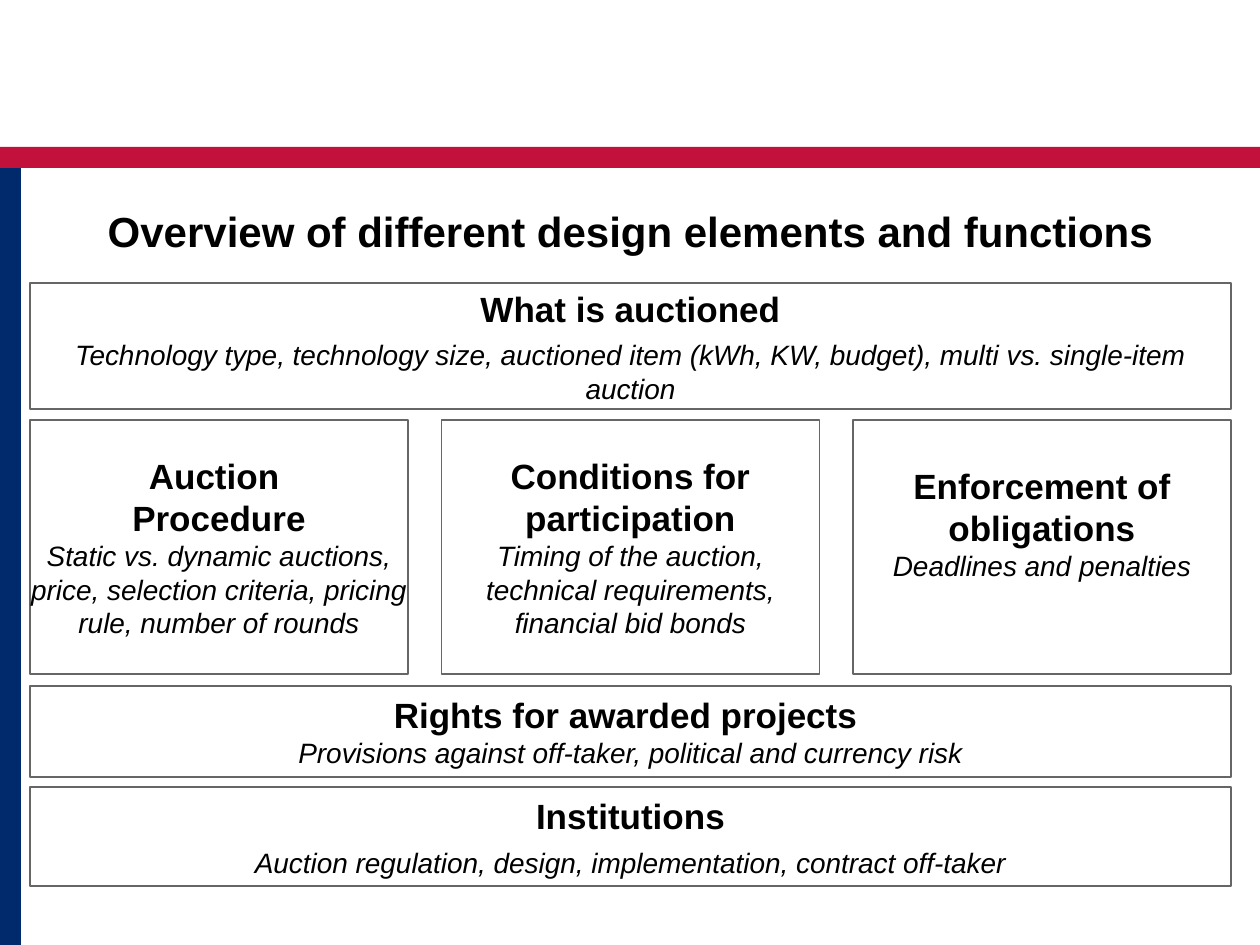
from pptx import Presentation
from pptx.dml.color import RGBColor
from pptx.enum.shapes import MSO_SHAPE
from pptx.enum.text import MSO_ANCHOR, PP_ALIGN
from pptx.util import Emu, Pt

FONT = "Arial"
BLACK, GREY, RED, NAVY = "000000", "666666", "C2113A", "002A6C"
LEFT, WIDTH, COLUMN_WIDTH = 30, 1201, 378
COLUMNS = [
    (["Auction ", "Procedure"],
     "Static vs. dynamic auctions, price, selection criteria, pricing rule, number of rounds", 0),
    (["Conditions for participation"],
     "Timing of the auction, technical requirements, financial bid bonds", 0),
    (["Enforcement of obligations"], "Deadlines and penalties", 48),
]


def px(length):
    """Turn pixels into EMU."""
    return Emu(round(length * 914400 / 126))


def color(value):
    """Turn a hex string into a colour."""
    return RGBColor.from_string(value)


def add_rectangle(slide, box, fill=None, line=None):
    """Add a rectangle with an optional fill and outline."""
    shape = slide.shapes.add_shape(MSO_SHAPE.RECTANGLE, *map(px, box))
    shape.shadow.inherit = False
    if fill:
        shape.fill.solid()
        shape.fill.fore_color.rgb = color(fill)
    else:
        shape.fill.background()
    if line:
        shape.line.color.rgb = color(line)
        shape.line.width = Pt(0.75)
    else:
        shape.line.fill.background()
    return shape


def format_paragraph(paragraph, text, size, bold=False, italic=False):
    """Fill a centred black paragraph."""
    paragraph.text = text
    paragraph.alignment = PP_ALIGN.CENTER
    paragraph.font.name = FONT
    paragraph.font.size = Pt(size)
    paragraph.font.bold = bold
    paragraph.font.italic = italic
    paragraph.font.color.rgb = color(BLACK)


def add_element(slide, box, headings, description, gap=0, bottom=0):
    """Add an outlined box with bold headings over an italic description."""
    frame = add_rectangle(slide, box, line=GREY).text_frame
    frame.word_wrap = True
    frame.vertical_anchor = MSO_ANCHOR.MIDDLE
    frame.margin_left = frame.margin_right = frame.margin_top = 0
    frame.margin_bottom = px(bottom)
    paragraph = frame.paragraphs[0]
    for heading in headings:
        format_paragraph(paragraph, heading, 20, bold=True)
        paragraph.space_after = Pt(gap)
        paragraph = frame.add_paragraph()
    format_paragraph(paragraph, description, 16, italic=True)


def add_columns(slide, box):
    """Spread the three middle elements evenly over a box."""
    left, top, width, height = box
    step = (width - COLUMN_WIDTH) / (len(COLUMNS) - 1)
    for index, (headings, description, bottom) in enumerate(COLUMNS):
        column = (left + index * step, top, COLUMN_WIDTH, height)
        add_element(slide, column, headings, description, bottom=bottom)


def add_title(slide, box, text):
    """Place and format the title placeholder."""
    title = slide.shapes.title
    title.left, title.top, title.width, title.height = map(px, box)
    frame = title.text_frame
    frame.word_wrap = True
    frame.vertical_anchor = MSO_ANCHOR.MIDDLE
    format_paragraph(frame.paragraphs[0], text, 24, bold=True)


def main():
    """Build and save the slide."""
    presentation = Presentation()
    presentation.slide_width, presentation.slide_height = px(1260), px(945)
    slide = presentation.slides.add_slide(presentation.slide_layouts[5])
    add_rectangle(slide, (0, 147, 1260, 21), fill=RED)
    add_rectangle(slide, (0, 168, 21, 777), fill=NAVY)
    add_title(slide, (95, 199, 1071, 63), "Overview of different design elements and functions")
    add_element(
        slide, (LEFT, 283, WIDTH, 126), ["What is auctioned"],
        "Technology type, technology size, auctioned item (kWh, KW, budget), "
        "multi vs. single-item auction", gap=5)
    add_columns(slide, (LEFT, 420, WIDTH, 254))
    add_element(
        slide, (LEFT, 686, WIDTH, 91), ["Rights for awarded projects "],
        "Provisions against off-taker, political and currency risk")
    add_element(
        slide, (LEFT, 787, WIDTH, 99), ["Institutions"],
        "Auction regulation, design, implementation, contract off-taker", gap=5)
    presentation.save("out.pptx")


if __name__ == "__main__":
    main()
